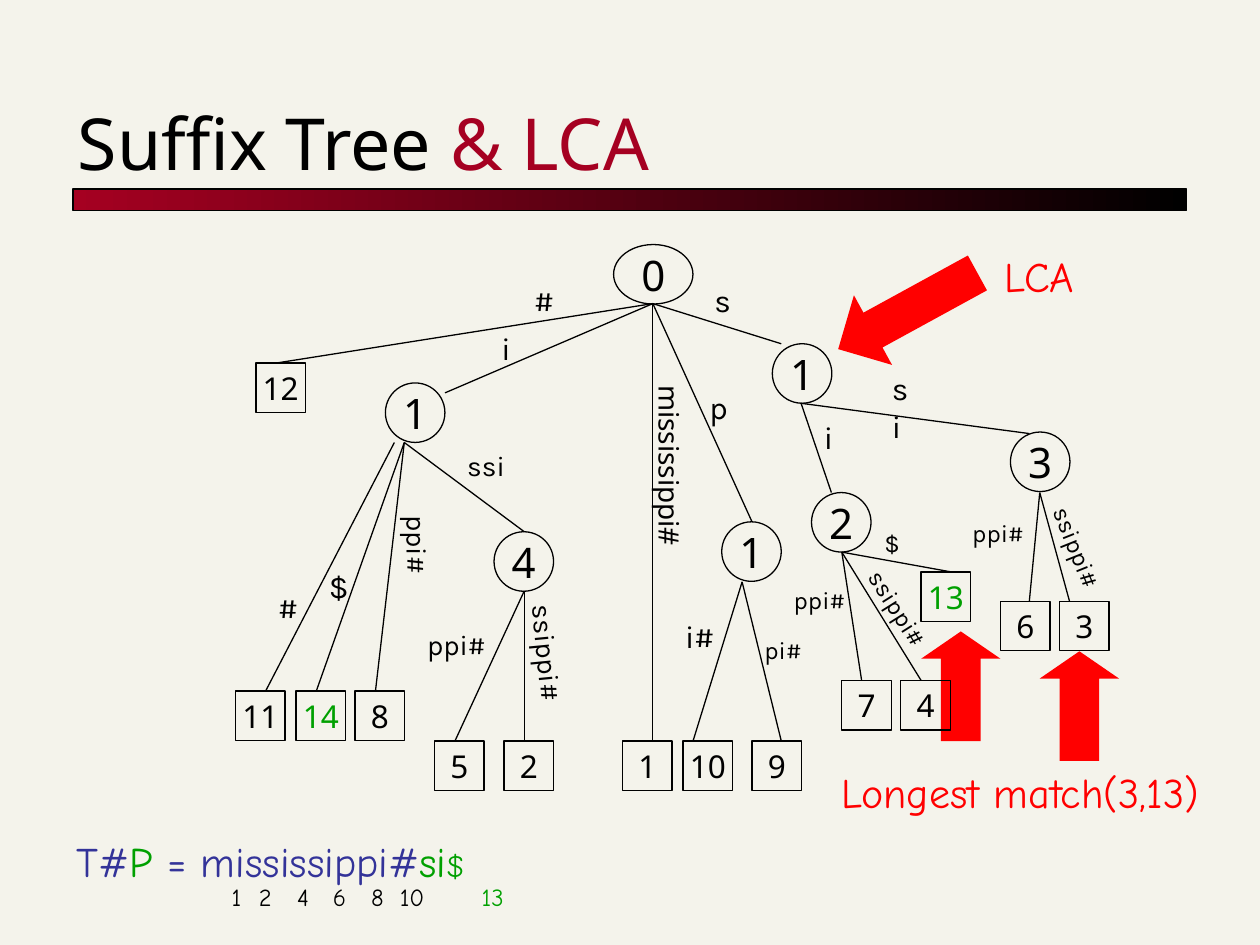
import pptx
import pptx.util
import pptx.dml.color
import pptx.enum.shapes
import pptx.enum.text
import pptx.oxml.ns
import lxml.etree

Cm, Pt = pptx.util.Cm, pptx.util.Pt
RGB = pptx.dml.color.RGBColor.from_string
MSO = pptx.enum.shapes.MSO_SHAPE
ANCHOR = pptx.enum.text.MSO_ANCHOR
COLORS = {"bg": "F4F3EB", "wine": "A50021", "black": "000000",
          "red": "FF0000", "green": "00A000", "blue": "333399"}

prs = pptx.Presentation()
prs.slide_width, prs.slide_height = Cm(25.4), Cm(19.05)
s = prs.slides.add_slide(prs.slide_layouts[6])
s.background.fill.solid()
s.background.fill.fore_color.rgb = RGB(COLORS["bg"])


def add_run(p, text, size, font, color="black"):
    r = p.add_run()
    r.text = text
    r.font.size = Pt(size)
    r.font.name = font
    r.font.color.rgb = RGB(COLORS[color])


def add_label(text, x, y, w, h, size, font, color="black", angle=0):
    sp = s.shapes.add_textbox(Cm(x), Cm(y), Cm(w), Cm(h))
    sp.rotation = angle
    tf = sp.text_frame
    tf.word_wrap = False
    tf.auto_size = pptx.enum.text.MSO_AUTO_SIZE.SHAPE_TO_FIT_TEXT
    add_run(tf.paragraphs[0], text, size, font, color)


sp = s.shapes.add_shape(MSO.RECTANGLE, Cm(1.47), Cm(3.81), Cm(22.45), Cm(0.43))
sp.shadow.inherit = False
sp.fill.gradient()
sp.fill.gradient_angle = 0
for stop, color in zip(sp.fill.gradient_stops, ("wine", "black")):
    stop.color.rgb = RGB(COLORS[color])
sp.line.color.rgb = RGB(COLORS["black"])
sp.line.width = Pt(0.75)

sp = s.shapes.add_textbox(Cm(1.32), Cm(2.26), Cm(21.59), Cm(1.47))
tf = sp.text_frame
tf.word_wrap = True
tf.vertical_anchor = ANCHOR.BOTTOM
tf.margin_bottom = 0
p = tf.paragraphs[0]
p.line_spacing = 1.2
add_run(p, "Suffix Tree ", 41, "Noto Sans")
add_run(p, "& LCA", 41, "Noto Sans", "wine")

arrows = [(17.5, 4.67, 3.2, 241.3, 0.5), (18.57, 12.73, 2.21, 0, 0.344),
          (20.96, 13.13, 2.21, 0, 0.344)]
for x, y, h, angle, head in arrows:
    sp = s.shapes.add_shape(MSO.UP_ARROW, Cm(x), Cm(y), Cm(1.6), Cm(h))
    sp.shadow.inherit = False
    sp.rotation = angle
    sp.adjustments[0], sp.adjustments[1] = 0.5, head
    sp.fill.solid()
    sp.fill.fore_color.rgb = RGB(COLORS["red"])
    sp.line.fill.background()

add_label("LCA", 20, 4.93, 2.13, 1.27, 24, "Comic Neue", "red")
add_label("Longest match(3,13)", 16.71, 15.32, 8.59, 1.27, 24, "Comic Neue", "red")

edges = [
    (13.16, 6.12, [(5.56, 7.32), (8.97, 7.92), (13.16, 14.94), (15.16, 10.52), (15.75, 6.93)]),
    (7.95, 8.92, [(5.36, 13.92)]),
    (8.15, 8.92, [(6.38, 13.92), (7.57, 13.92), (10.57, 10.72)]),
    (10.57, 11.91, [(9.17, 14.94), (10.57, 14.94)]),
    (14.96, 11.73, [(13.97, 14.94), (15.75, 14.94)]),
    (16.15, 8.13, [(16.76, 9.93), (20.75, 8.74)]),
    (16.97, 11.13, [(17.37, 13.72), (18.57, 13.72), (19.18, 11.53)]),
    (20.96, 9.93, [(20.75, 12.12), (21.56, 12.12)]),
]
for x1, y1, ends in edges:
    for x2, y2 in ends:
        line = s.shapes.add_connector(pptx.enum.shapes.MSO_CONNECTOR.STRAIGHT,
                                      Cm(x1), Cm(y1), Cm(x2), Cm(y2))
        line.line.color.rgb = RGB(COLORS["black"])
        line.line.width = Pt(0.75)
        lxml.etree.SubElement(line._element.spPr, pptx.oxml.ns.qn("a:effectLst"))

leaves = [
    ("12", 5.16, 7.32), ("11", 4.75, 13.93), ("14", 5.97, 13.93), ("8", 7.16, 13.93),
    ("5", 8.76, 14.94), ("2", 10.16, 14.94), ("1", 12.55, 14.94), ("10", 13.77, 14.94),
    ("9", 15.16, 14.94), ("7", 16.97, 13.72), ("4", 18.16, 13.72), ("13", 18.57, 11.53),
    ("6", 20.17, 12.12), ("3", 21.36, 12.12),
]
inner = [("0", 12.37, 4.93), ("1", 7.77, 7.72), ("4", 9.96, 10.72), ("1", 14.55, 10.52),
         ("1", 15.57, 6.93), ("2", 16.36, 9.93), ("3", 20.37, 8.71)]
for nodes, kind, side, size in ((leaves, MSO.RECTANGLE, 1, 18), (inner, MSO.OVAL, 1.2, 24)):
    for text, x, y in nodes:
        w = 1.6 if text == "0" else side
        sp = s.shapes.add_shape(kind, Cm(x), Cm(y), Cm(w), Cm(side))
        sp.shadow.inherit = False
        sp.fill.background()
        sp.line.color.rgb = RGB(COLORS["black"])
        sp.line.width = Pt(0.75)
        tf = sp.text_frame
        tf.word_wrap = False
        tf.vertical_anchor = ANCHOR.MIDDLE
        p = tf.paragraphs[0]
        p.alignment = pptx.enum.text.PP_ALIGN.CENTER
        add_run(p, text, size, "Noto Sans", "green" if text in ("13", "14") else "black")

labels = {
    18: [("#", 10.52, 5.54, 1.04, 0), ("i", 9.86, 6.5, 0.71, 0), ("p", 14.05, 7.7, 0.91, 0),
         ("i#", 13.56, 12.32, 1.22, 0), ("s", 14.15, 5.54, 0.84, 0), ("i", 16.36, 8.31, 0.71, 0),
         ("si", 17.73, 7.32, 1.02, 0), ("#", 5.36, 11.73, 1.04, 0), ("$", 6.38, 11.3, 0.91, 0)],
    16: [("ppi#", 7.49, 10.59, 1.85, 90), ("ssi", 9.17, 8.92, 1.27, 0),
         ("mississippi#", 11.4, 9.14, 4.19, 90), ("ppi#", 8.36, 12.52, 1.85, 0),
         ("ssippi#", 9.73, 12.78, 2.62, 84.5)],
    14: [("pi#", 15.16, 12.67, 1.37, 0), ("ppi#", 15.75, 11.66, 1.68, 0),
         ("ssippi#", 16.97, 11.89, 2.34, 57.8), ("ssippi#", 20.57, 10.67, 2.34, 68.1),
         ("ppi#", 19.35, 10.31, 1.68, 0), ("$", 17.58, 10.52, 0.81, 0)],
}
heights = {18: 1.02, 16: 0.94, 14: 0.84}
for size, group in labels.items():
    for text, x, y, w, angle in group:
        font = "Noto Sans" if text == "mississippi#" else "Karla"
        add_label(text, x, y, w, heights[size], size, font, angle=angle)

sp = s.shapes.add_textbox(Cm(1.3), Cm(16.71), Cm(9.14), Cm(1.8))
tf = sp.text_frame
tf.word_wrap = True
p = tf.paragraphs[0]
for text, size, color in (("T#", 24, "blue"), ("P", 24, "green"), (" = mississippi#", 24, "blue"),
                          ("si", 24, "green"), ("$", 18, "green")):
    add_run(p, text, size, "Comic Neue", color)
p = tf.add_paragraph()
p.line_spacing = 0.9
tabs = lxml.etree.SubElement(p._p.get_or_add_pPr(), pptx.oxml.ns.qn("a:tabLst"))
positions = [("1", 3.12), ("2", 3.67), ("4", 4.44), ("6", 5.16), ("8", 5.93),
             ("10", 6.51), ("13", 8.16)]
for text, x in positions:
    lxml.etree.SubElement(tabs, pptx.oxml.ns.qn("a:tab"), pos=str(int(Cm(x))), algn="l")
    add_run(p, "\t" + text, 14, "Comic Neue", "green" if text == "13" else "black")

prs.save("out.pptx")
